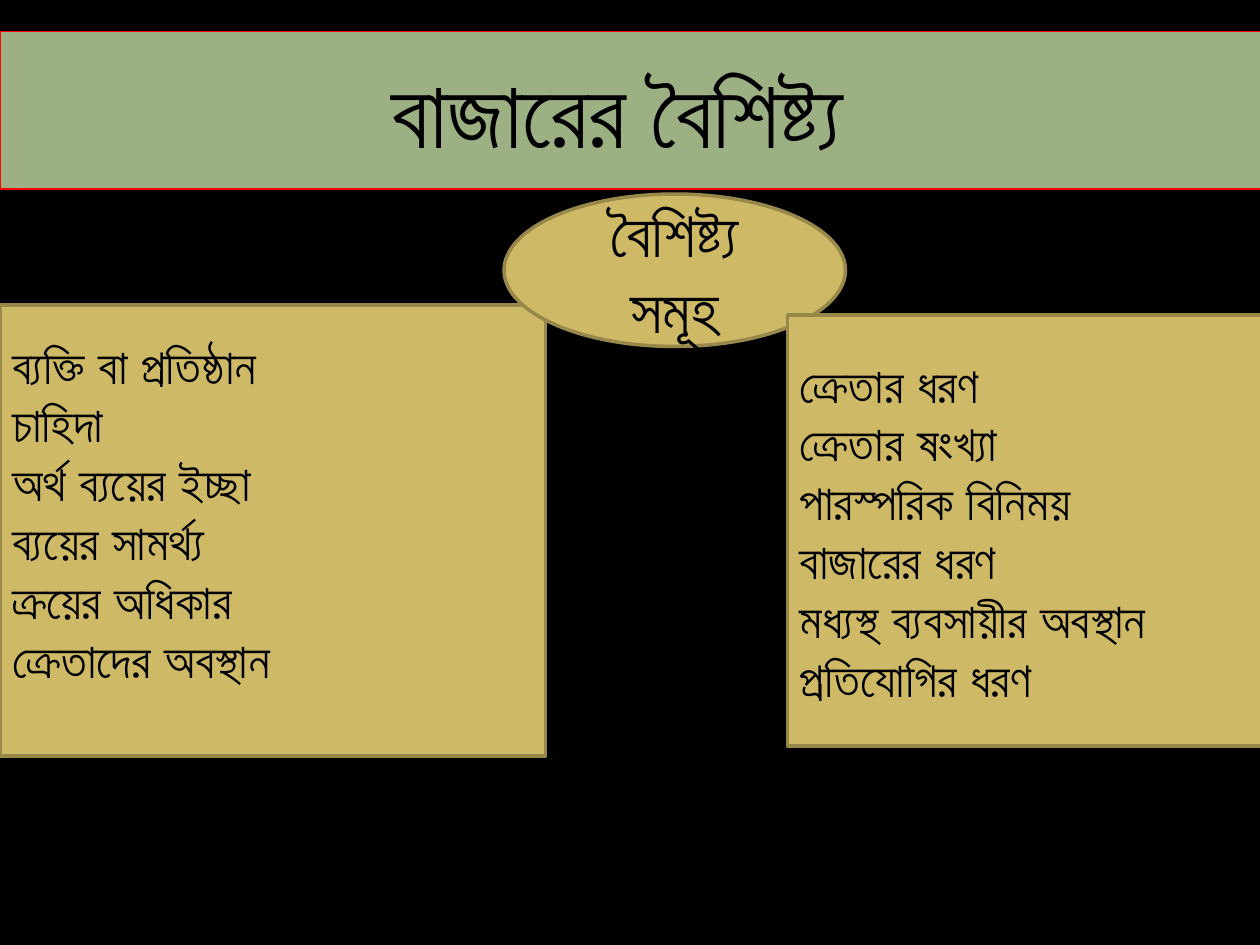
from dataclasses import dataclass

from pptx import Presentation
from pptx.dml.color import RGBColor
from pptx.enum import shapes, text
from pptx.slide import Slide
from pptx.util import Inches, Pt


@dataclass(frozen=True)
class Theme:
    background: str = "000000"
    ink: str = "000000"
    banner: str = "9CB084"
    banner_edge: str = "FF0000"
    panel: str = "CEB966"
    panel_edge: str = "98894B"
    title_font: str = "Open Sans"
    body_font: str = "Cambria"
    title_size: int = 54
    topic_size: int = 36
    list_size: int = 28


THEME = Theme()


@dataclass(frozen=True)
class Panel:
    left: float
    top: float
    width: float
    height: float
    lines: tuple[str, ...]
    size: int = THEME.list_size
    font: str = THEME.body_font
    bold: bool = True
    align: text.PP_ALIGN = text.PP_ALIGN.LEFT
    outline: shapes.MSO_SHAPE = shapes.MSO_SHAPE.RECTANGLE
    fill: str = THEME.panel
    edge: str = THEME.panel_edge
    edge_width: float = 2
    bottom_inset: float = 0.05


# Content, from back to front
PANELS = (
    Panel(0, 0.25, 10.01, 1.25, ("বাজারের বৈশিষ্ট্য ",),
          size=THEME.title_size, font=THEME.title_font,
          align=text.PP_ALIGN.CENTER, fill=THEME.banner,
          edge=THEME.banner_edge, edge_width=0.75),
    Panel(0, 2.42, 4.33, 3.58,
          ("ব্যক্তি বা প্রতিষ্ঠান", "চাহিদা", "অর্থ ব্যয়ের ইচ্ছা",
           "ব্যয়ের সামর্থ্য", "ক্রয়ের অধিকার", "ক্রেতাদের অবস্থান"),
          bottom_inset=0.35),
    Panel(4, 1.54, 2.71, 1.21, ("বৈশিষ্ট্য সমূহ",),
          size=THEME.topic_size, bold=False, align=text.PP_ALIGN.CENTER,
          outline=shapes.MSO_SHAPE.OVAL),
    Panel(6.25, 2.5, 4, 3.42,
          ("ক্রেতার ধরণ", "ক্রেতার ষংখ্যা", "পারস্পরিক বিনিময়",
           "বাজারের ধরণ", "মধ্যস্থ ব্যবসায়ীর অবস্থান", "প্রতিযোগির ধরণ")),
)


def color(value: str) -> RGBColor:
    return RGBColor.from_string(value)


def draw_panel(slide: Slide, panel: Panel) -> None:
    # Body
    body = slide.shapes.add_shape(
        panel.outline, Inches(panel.left), Inches(panel.top),
        Inches(panel.width), Inches(panel.height))
    body.shadow.inherit = False
    body.fill.solid()
    body.fill.fore_color.rgb = color(panel.fill)
    body.line.color.rgb = color(panel.edge)
    body.line.width = Pt(panel.edge_width)

    # Wording
    frame = body.text_frame
    frame.word_wrap = True
    frame.vertical_anchor = text.MSO_ANCHOR.MIDDLE
    frame.margin_bottom = Inches(panel.bottom_inset)
    for index, line in enumerate(panel.lines):
        paragraph = frame.add_paragraph() if index else frame.paragraphs[0]
        paragraph.alignment = panel.align
        run = paragraph.add_run()
        run.text = line
        run.font.name = panel.font
        run.font.size = Pt(panel.size)
        run.font.bold = panel.bold
        run.font.color.rgb = color(THEME.ink)


def main() -> None:
    deck = Presentation()
    deck.slide_width, deck.slide_height = Inches(10), Inches(7.5)
    slide = deck.slides.add_slide(deck.slide_layouts[6])
    slide.background.fill.solid()
    slide.background.fill.fore_color.rgb = color(THEME.background)
    for panel in PANELS:
        draw_panel(slide, panel)
    deck.save("out.pptx")


if __name__ == "__main__":
    main()
